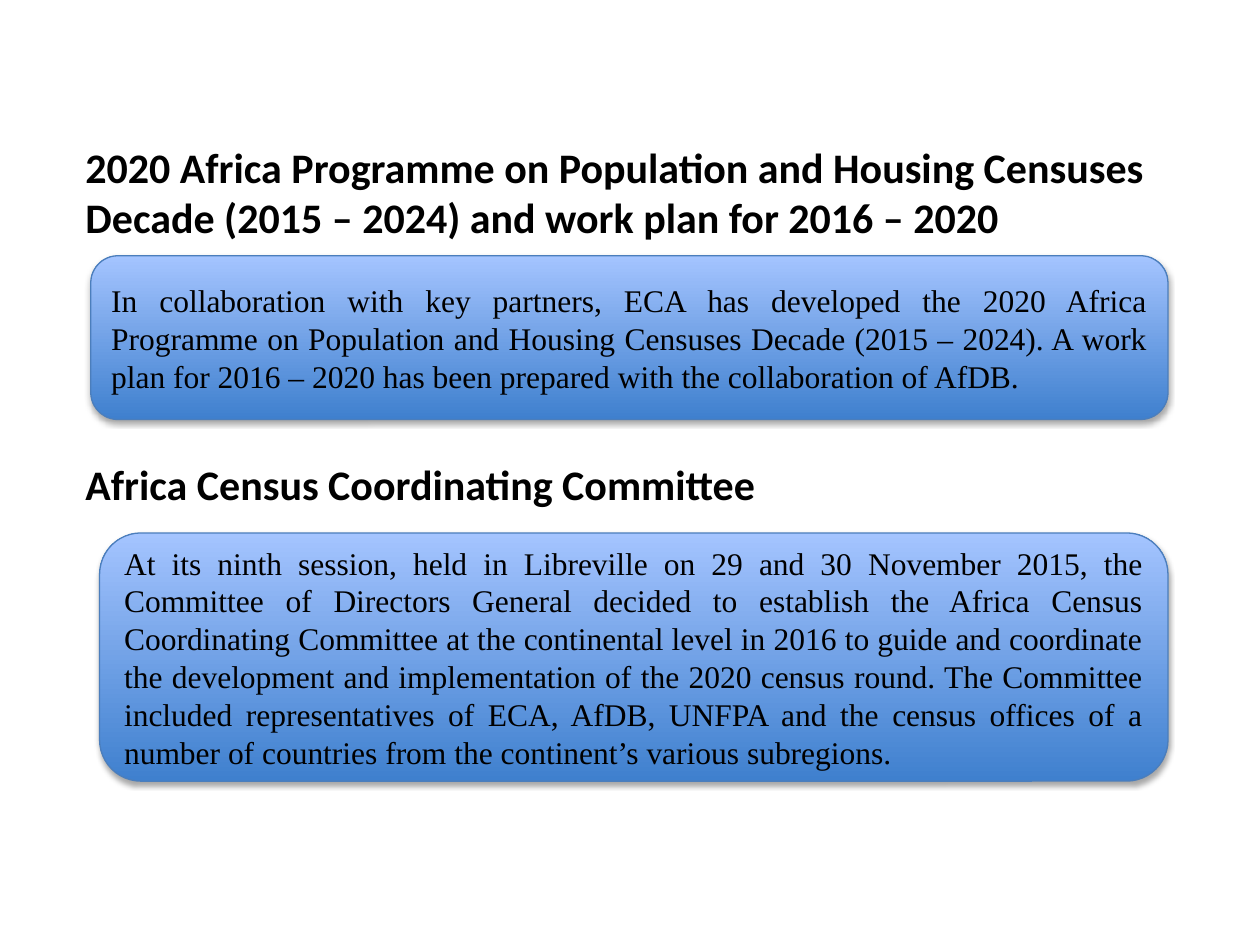
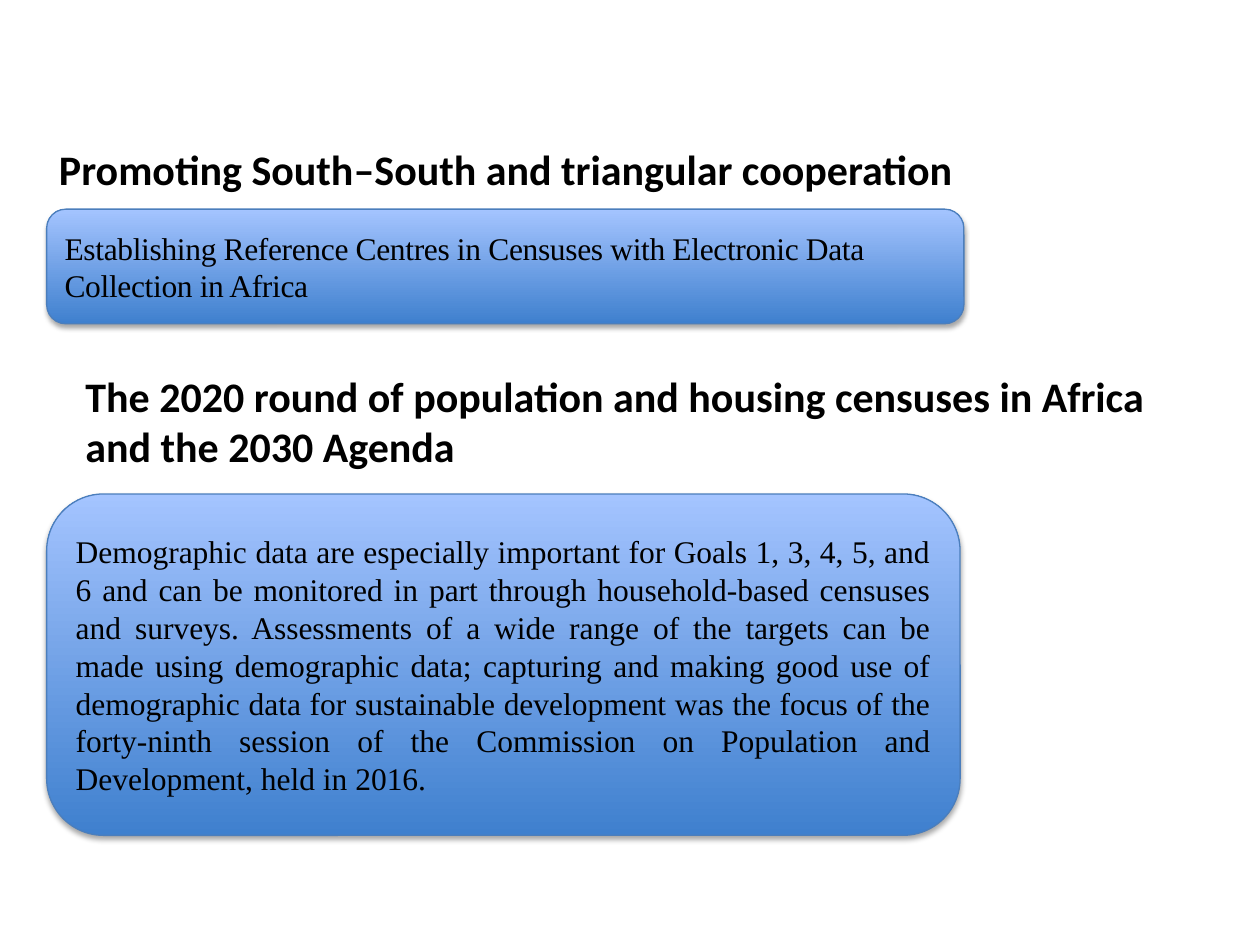
"""Build two slides on the 2020 round of African population and housing censuses."""
from lxml import etree
from pptx import Presentation
from pptx.dml.color import RGBColor as RGB
from pptx.enum.shapes import MSO_SHAPE as SHAPE
from pptx.enum.text import MSO_ANCHOR as ANCHOR, PP_ALIGN as ALIGN
from pptx.oxml.ns import qn
from pptx.util import Inches, Pt

WIDTH, HEIGHT = Inches(10), Inches(7.5)
COLUMNS, ROWS = 100, 75
COLORS = {"text": "000000", "bottom": "3F80CE", "top": "A4C4FF",
          "line": "4B7EBC", "shadow": "000000"}
HEADING = {"name": "Calibri", "size": 24, "bold": True}
BODY = {"name": "Times New Roman", "size": 18, "bold": False}
LEFT_EDGE, INDENT = 3.7, 5.8


def color(key):
    """Return the named colour."""
    return RGB.from_string(COLORS[key])


def cells(left, top, width, height):
    """Turn grid columns and rows into slide lengths."""
    col, row = WIDTH / COLUMNS, HEIGHT / ROWS
    return int(left * col), int(top * row), int(width * col), int(height * row)


def write(tf, text, style, align):
    """Fill a frame with one wrapped paragraph and return its run."""
    tf.word_wrap = True
    p = tf.paragraphs[0]
    p.alignment = align
    r = p.add_run()
    r.text = text
    r.font.name, r.font.bold = style["name"], style["bold"]
    r.font.size = Pt(style["size"])
    r.font.color.rgb = color("text")
    return r


def add_shadow(sp):
    """Give a shape a soft shadow straight below it."""
    sp.shadow.inherit = False
    effects = sp._element.spPr.find(qn("a:effectLst"))
    outer = etree.SubElement(effects, qn("a:outerShdw"), blurRad=str(Pt(3.1)),
                             dist=str(Pt(1.8)), dir="5400000", rotWithShape="0")
    rgb = etree.SubElement(outer, qn("a:srgbClr"), val=COLORS["shadow"])
    etree.SubElement(rgb, qn("a:alpha"), val="35000")


def add_heading(s, text, *place):
    """Add a bold heading."""
    tf = s.shapes.add_textbox(*cells(*place)).text_frame
    write(tf, text, HEADING, ALIGN.LEFT)


def add_panel(s, text, *place, align=ALIGN.JUSTIFY, spacing=0):
    """Add a rounded gradient panel with body text."""
    sp = s.shapes.add_shape(SHAPE.ROUNDED_RECTANGLE, *cells(*place))
    sp.fill.gradient()
    sp.fill.gradient_angle = 90
    for stop, key in zip(sp.fill.gradient_stops, ("bottom", "top")):
        stop.color.rgb = color(key)
    sp.line.color.rgb = color("line")
    sp.line.width = Pt(0.75)
    add_shadow(sp)
    sp.text_frame.vertical_anchor = ANCHOR.MIDDLE
    r = write(sp.text_frame, text, BODY, align)
    if spacing:
        r.font._element.set("spc", str(int(spacing * 100)))


def add_programme_slide(s):
    """Present the decade programme and the coordinating committee."""
    add_heading(s, "2020 Africa Programme on Population and Housing Censuses "
                "Decade (2015 – 2024) and work plan for 2016 – 2020",
                INDENT, 10.7, 90, 9.1)
    add_panel(s, "In collaboration with key partners, ECA has developed the 2020 "
              "Africa Programme on Population and Housing Censuses Decade "
              "(2015 – 2024). A work plan for 2016 – 2020 has been prepared with "
              "the collaboration of AfDB.", 7.2, 20.3, 85.5, 13)
    add_heading(s, "Africa Census Coordinating Committee", INDENT, 35.9, 58.1, 5)
    add_panel(s, "At its ninth session, held in Libreville on 29 and 30 November "
              "2015, the Committee of Directors General decided to establish the "
              "Africa Census Coordinating Committee at the continental level in "
              "2016 to guide and coordinate the development and implementation of "
              "the 2020 census round. The Committee included representatives of "
              "ECA, AfDB, UNFPA and the census offices of a number of countries "
              "from the continent’s various subregions.", 7.9, 42.3, 84.8, 19.7)


def add_cooperation_slide(s):
    """Present cooperation between countries and the 2030 Agenda."""
    add_heading(s, "Promoting South–South and triangular cooperation",
                LEFT_EDGE, 10.9, 90, 5)
    add_panel(s, "Establishing Reference Centres in Censuses with Electronic Data "
              "Collection in Africa", LEFT_EDGE, 16.6, 72.8, 9.1,
              align=ALIGN.LEFT, spacing=-0.2)
    add_heading(s, "The 2020 round of population and housing censuses in Africa "
                "and the 2030 Agenda", INDENT, 28.9, 88, 9.1)
    add_panel(s, "Demographic data are especially important for Goals 1, 3, 4, 5, "
              "and 6 and can be monitored in part through household-based censuses "
              "and surveys. Assessments of a wide range of the targets can be made "
              "using demographic data; capturing and making good use of demographic "
              "data for sustainable development was the focus of the forty-ninth "
              "session of the Commission on Population and Development, held in "
              "2016.", LEFT_EDGE, 39.2, 72.5, 27.1)


def main():
    """Build and save the presentation."""
    prs = Presentation()
    prs.slide_width, prs.slide_height = WIDTH, HEIGHT
    for fill_slide in (add_programme_slide, add_cooperation_slide):
        fill_slide(prs.slides.add_slide(prs.slide_layouts[6]))
    prs.save("out.pptx")


if __name__ == "__main__":
    main()
